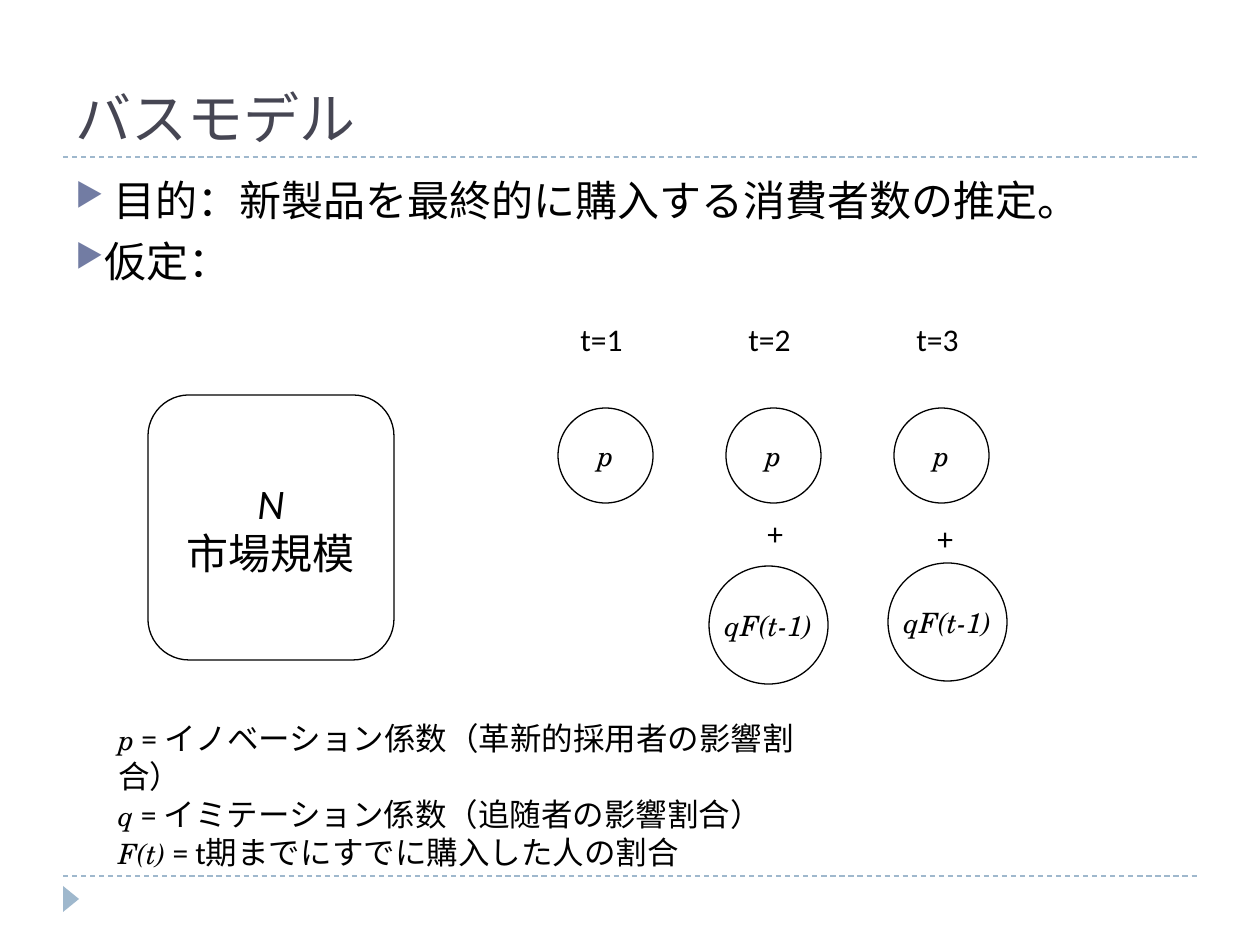
from lxml import etree
from pptx import Presentation
from pptx import util as u
from pptx.dml.color import RGBColor
from pptx.enum import dml, shapes, text
from pptx.oxml.ns import qn

PX = u.Inches(1) / 126

BLACK = RGBColor(0x00, 0x00, 0x00)
WHITE = RGBColor(0xFF, 0xFF, 0xFF)
TITLE_GREY = RGBColor(0x46, 0x46, 0x53)
RULE_BLUE = RGBColor(0x9F, 0xB8, 0xCD)
BULLET_BLUE = RGBColor(0x72, 0x7C, 0xA3)

LABEL = {"name": "Calibri", "size": u.Pt(18)}
BODY = {"name": "Calibri", "size": u.Pt(24)}
SYMBOL = {"name": "TeX Gyre Schola", "size": u.Pt(16), "italic": True}
HEADING = {"name": "Roboto Slab", "size": u.Pt(32)}


def px(*lengths):
    return [round(length * PX) for length in lengths]


def write(frame, lines, align=text.PP_ALIGN.LEFT, color=BLACK):
    """Each line is a list of (words, font format) runs."""
    for i, runs in enumerate(lines):
        paragraph = frame.paragraphs[0] if i == 0 else frame.add_paragraph()
        paragraph.alignment = align
        for words, style in runs:
            run = paragraph.add_run()
            run.text = words
            run.font.color.rgb = color
            for key, value in style.items():
                setattr(run.font, key, value)


def add_text(slide, box, lines, wrap=False, color=BLACK,
             anchor=text.MSO_ANCHOR.TOP):
    frame = slide.shapes.add_textbox(*px(*box)).text_frame
    frame.word_wrap = wrap
    frame.vertical_anchor = anchor
    write(frame, lines, color=color)
    return frame


def add_node(slide, kind, box, lines, fill=None):
    node = slide.shapes.add_shape(kind, *px(*box))
    node.shadow.inherit = False
    if fill is None:
        node.fill.background()
    else:
        node.fill.solid()
        node.fill.fore_color.rgb = fill
    node.line.color.rgb = BLACK
    node.line.width = u.Pt(0.75)
    frame = node.text_frame
    frame.word_wrap = False
    frame.vertical_anchor = text.MSO_ANCHOR.MIDDLE
    write(frame, lines, text.PP_ALIGN.CENTER)


def add_rule(slide, y):
    rule = slide.shapes.add_connector(
        shapes.MSO_CONNECTOR.STRAIGHT, *px(63, y, 1197, y))
    rule.line.color.rgb = RULE_BLUE
    rule.line.width = u.Pt(0.75)
    rule.line.dash_style = dml.MSO_LINE.DASH
    etree.SubElement(rule._element.spPr, qn("a:effectLst"))


def add_page_marker(slide):
    marker = slide.shapes.add_shape(
        shapes.MSO_SHAPE.ISOSCELES_TRIANGLE, *px(58, 891, 26, 16))
    marker.rotation = 90
    marker.shadow.inherit = False
    marker.fill.solid()
    marker.fill.fore_color.rgb = RULE_BLUE
    marker.line.fill.background()


def set_bullet(paragraph, margin):
    paragraph.space_before = u.Pt(6)
    props = paragraph._p.get_or_add_pPr()
    props.set("marL", str(px(margin)[0]))
    props.set("indent", str(px(-38)[0]))
    color = etree.SubElement(props, qn("a:buClr"))
    etree.SubElement(color, qn("a:srgbClr"), val=str(BULLET_BLUE))
    etree.SubElement(props, qn("a:buSzPct"), val="76000")
    etree.SubElement(props, qn("a:buChar"), char="▶")


def main():
    prs = Presentation()
    prs.slide_width, prs.slide_height = px(1260, 945)
    slide = prs.slides.add_slide(prs.slide_layouts[6])

    # Page frame
    for y in (876, 157):
        add_rule(slide, y)
    add_page_marker(slide)

    # Title and aims
    add_text(slide, (63, 21, 1134, 136), [[("バスモデル", HEADING)]], True,
             TITLE_GREY, text.MSO_ANCHOR.BOTTOM)
    aims = add_text(slide, (63, 168, 1134, 680), [
        [("目的：新製品を最終的に購入する消費者数の推定。", BODY)],
        [("仮定：", BODY)]], True)
    for paragraph, margin in zip(aims.paragraphs, (38, 0)):
        set_bullet(paragraph, margin)

    # Market size
    add_node(slide, shapes.MSO_SHAPE.ROUNDED_RECTANGLE, (148, 395, 246, 265),
             [[("N", {**BODY, "italic": True})], [("市場規模", BODY)]], WHITE)

    # Periods with their innovation circles
    for period in range(3):
        x = 558 + 168 * period
        add_text(slide, (x + 10, 314, 71, 50),
                 [[(f"t={period + 1}", LABEL)]])
        add_node(slide, shapes.MSO_SHAPE.OVAL, (x, 408, 95, 95),
                 [[("p", SYMBOL)]])

    # Imitation circles from the second period on
    for x, y, plus_x, plus_y in ((709, 566, 755, 508), (888, 563, 925, 513)):
        add_text(slide, (plus_x, plus_y, 44, 50), [[("+", LABEL)]])
        add_node(slide, shapes.MSO_SHAPE.OVAL, (x, y, 119, 118),
                 [[("qF(t-1)", SYMBOL)]])

    # Definitions
    definitions = (("p", "イノベーション係数（革新的採用者の影響割合）"),
                   ("q", "イミテーション係数（追随者の影響割合）"),
                   ("F(t)", "t期までにすでに購入した人の割合"))
    add_text(slide, (106, 713, 708, 127),
             [[(symbol, SYMBOL), (f" = {meaning}", LABEL)]
              for symbol, meaning in definitions], True)

    prs.save("out.pptx")


if __name__ == "__main__":
    main()
